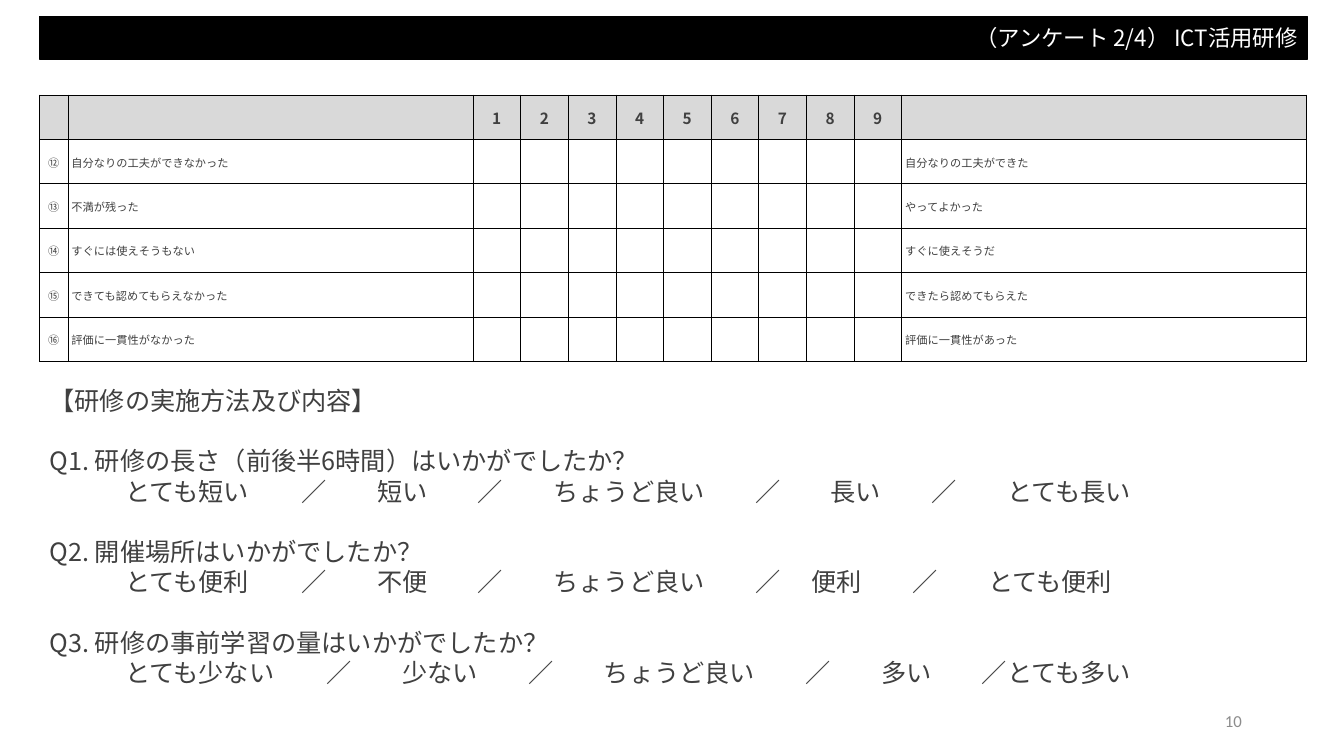
from lxml.etree import SubElement
from pptx import Presentation
from pptx.dml.color import RGBColor
from pptx.enum.shapes import MSO_SHAPE
from pptx.enum.text import MSO_ANCHOR, PP_ALIGN
from pptx.oxml.ns import qn
from pptx.util import Cm, Pt

BLACK = RGBColor(0x00, 0x00, 0x00)
WHITE = RGBColor(0xFF, 0xFF, 0xFF)
DARK = RGBColor(0x40, 0x40, 0x40)
GRAY = RGBColor(0x8C, 0x8C, 0x8C)
PALE = RGBColor(0xD9, 0xD9, 0xD9)
NOTO = "Noto Sans CJK JP"
LEFT, WIDTH = Cm(1), Cm(31.95)


def style(para, size, color, face=NOTO, bold=False, align=PP_ALIGN.LEFT):
    para.alignment = align
    for run in para.runs:
        font = run.font
        font.size, font.bold, font.name = Pt(size), bold, face
        font.color.rgb = color
        SubElement(font._element, qn("a:ea"), typeface=face)


def border(cell):
    props = cell._tc.get_or_add_tcPr()
    for side in ("lnL", "lnR", "lnT", "lnB"):
        line = SubElement(props, qn("a:" + side), w=str(Pt(0.5)))
        fill = SubElement(line, qn("a:solidFill"))
        SubElement(fill, qn("a:srgbClr"), val=str(BLACK))


deck = Presentation()
deck.slide_width, deck.slide_height = Cm(33.87), Cm(19.05)
slide = deck.slides.add_slide(deck.slide_layouts[6])
shapes = slide.shapes

bar = shapes.add_shape(MSO_SHAPE.RECTANGLE, LEFT, Cm(0.42), WIDTH, Cm(1.07))
bar.shadow.inherit = False
bar.fill.solid()
bar.fill.fore_color.rgb = BLACK
bar.line.color.rgb = BLACK
bar.line.width = Pt(1)
bar.text_frame.text = "（アンケート 2/4） ICT活用研修"
bar.text_frame.vertical_anchor = MSO_ANCHOR.MIDDLE
style(bar.text_frame.paragraphs[0], 16, WHITE, align=PP_ALIGN.RIGHT)

pairs = [
    ("⑫", "自分なりの工夫ができなかった", "自分なりの工夫ができた"),
    ("⑬", "不満が残った", "やってよかった"),
    ("⑭", "すぐには使えそうもない", "すぐに使えそうだ"),
    ("⑮", "できても認めてもらえなかった", "できたら認めてもらえた"),
    ("⑯", "評価に一貫性がなかった", "評価に一貫性があった"),
]
rows = [["", ""] + [str(n) for n in range(1, 10)] + [""]]
rows += [[mark, low] + [""] * 9 + [high] for mark, low, high in pairs]
widths = [0.71, 10.21] + [1.2] * 9 + [10.21]

grid = shapes.add_table(len(rows), len(widths), LEFT, Cm(2.39), WIDTH, Cm(6.72)).table
grid.first_row = grid.horz_banding = False
for col, width in zip(grid.columns, widths):
    col.width = Cm(width)
for r, row in enumerate(rows):
    grid.rows[r].height = Cm(1.12)
    for c, text in enumerate(row):
        cell = grid.cell(r, c)
        head, phrase = r == 0, c in (1, 11)
        border(cell)
        if head:
            cell.fill.solid()
            cell.fill.fore_color.rgb = PALE
        else:
            cell.fill.background()
        cell.margin_left = Cm(0.09 if phrase else 0.03)
        cell.margin_right = cell.margin_top = Cm(0.03)
        cell.margin_bottom = 0
        cell.vertical_anchor = MSO_ANCHOR.MIDDLE
        cell.text_frame.text = text
        style(cell.text_frame.paragraphs[0], 11 if head else 8, DARK, bold=head,
              align=PP_ALIGN.LEFT if phrase else PP_ALIGN.CENTER)

asks = [
    ("Q1. 研修の長さ（前後半6時間）はいかがでしたか？",
     ["とても短い", "短い", "ちょうど良い", "長い", "とても長い"], [2, 2, 2, 2]),
    ("Q2. 開催場所はいかがでしたか？",
     ["とても便利", "不便", "ちょうど良い", "便利", "とても便利"], [2, 2, 1.25, 2]),
    ("Q3. 研修の事前学習の量はいかがでしたか？",
     ["とても少ない", "少ない", "ちょうど良い", "多い", "とても多い"], [2, 2, 2, 0]),
]
EM = Pt(18)
box = shapes.add_textbox(LEFT, Cm(9.58), WIDTH, Cm(7.95))
frame = box.text_frame
frame.word_wrap = True
frame.text = "【研修の実施方法及び内容】"
for ask, words, gaps in asks:
    para = frame.add_paragraph()
    para.text = ask
    para.space_before = Pt(21.6)

    para = frame.add_paragraph()
    text, spot, stops = "\t" + words[0], 3, [3]
    for prev, word, gap in zip(words, words[1:], gaps):
        spot += len(prev) + 2
        stops.append(spot)
        spot += 1 + gap
        if gap:
            stops.append(spot)
        text += "\t／" + ("\t" if gap else "") + word
    para.text = text
    tabs = SubElement(para._p.get_or_add_pPr(), qn("a:tabLst"))
    for stop in stops:
        SubElement(tabs, qn("a:tab"), pos=str(int(stop * EM)), algn="l")
for para in frame.paragraphs:
    para.line_spacing = Pt(21.6)
    style(para, 18, DARK)

page = shapes.add_textbox(Cm(23.93), Cm(17.65), Cm(7.62), Cm(1.02))
page.text_frame.word_wrap = True
page.text_frame.vertical_anchor = MSO_ANCHOR.MIDDLE
page.text_frame.text = "10"
style(page.text_frame.paragraphs[0], 12, GRAY, "Calibri", align=PP_ALIGN.RIGHT)

deck.save("out.pptx")
